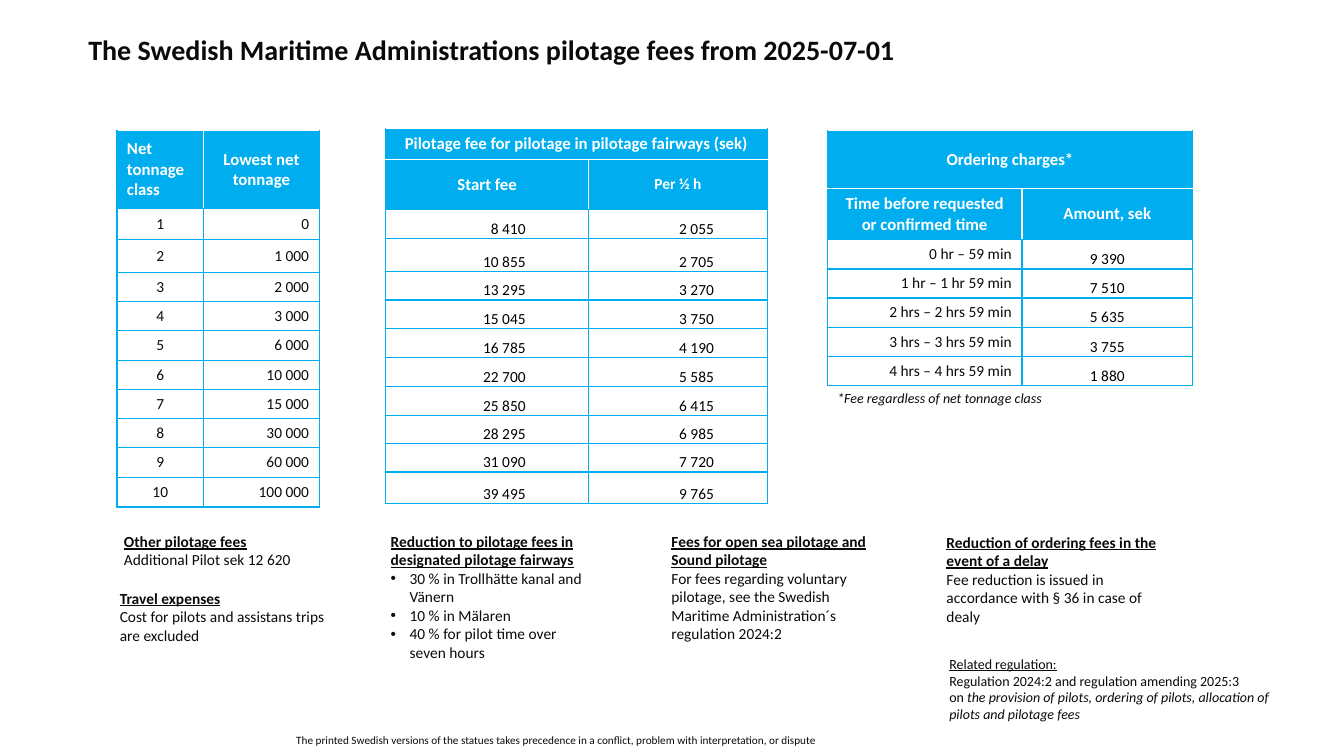
from lxml import etree
from pptx import Presentation
from pptx.dml.color import RGBColor
from pptx.enum import text as t
from pptx.oxml import ns
from pptx.util import Pt

SKY = RGBColor(0x00, 0xAE, 0xEF)
WHITE = RGBColor(0xFF, 0xFF, 0xFF)
INK = RGBColor(0x0C, 0x0A, 0x08)
BLACK = RGBColor(0x00, 0x00, 0x00)
LEFT, CENTER, RIGHT = t.PP_ALIGN.LEFT, t.PP_ALIGN.CENTER, t.PP_ALIGN.RIGHT

deck = Presentation()
deck.slide_width, deck.slide_height = Pt(960), Pt(540)
slide = deck.slides.add_slide(deck.slide_layouts[6])


def add_run(paragraph, words, size, color, bold=False, underline=False, italic=False):
    run = paragraph.add_run()
    run.text = words
    font = run.font
    font.name, font.size, font.color.rgb = "Calibri", Pt(size), color
    font.bold, font.underline, font.italic = bold, underline, italic


def style_cell(cell, words, size, color, align, fill, edges):
    props = cell._tc.get_or_add_tcPr()
    for side, edge in zip("LRTB", edges):
        line = etree.SubElement(props, ns.qn(f"a:ln{side}"), w="12700")
        solid = etree.SubElement(line, ns.qn("a:solidFill"))
        etree.SubElement(solid, ns.qn("a:srgbClr"), val=str(edge))
    if fill is None:
        cell.fill.background()
    else:
        cell.fill.solid()
        cell.fill.fore_color.rgb = fill
    cell.vertical_anchor = t.MSO_ANCHOR.MIDDLE
    paragraph = cell.text_frame.paragraphs[0]
    paragraph.alignment = align
    if words:
        add_run(paragraph, words, size, color, bold=fill is not None)


tonnages = ["0", "1 000", "2 000", "3 000", "6 000", "10 000", "15 000",
            "30 000", "60 000", "100 000"]
tonnage_rows = [(str(number), lowest) for number, lowest in enumerate(tonnages, 1)]
fee_rows = [("8 410", "2 055"), ("10 855", "2 705"), ("13 295", "3 270"),
            ("15 045", "3 750"), ("16 785", "4 190"), ("22 700", "5 585"),
            ("25 850", "6 415"), ("28 295", "6 985"), ("31 090", "7 720"),
            ("39 495", "9 765")]
ordering_rows = [("0 hr – 59 min", "9 390"), ("1 hr – 1 hr 59 min", "7 510"),
                 ("2 hrs – 2 hrs 59 min", "5 635"), ("3 hrs – 3 hrs 59 min", "3 755"),
                 ("4 hrs – 4 hrs 59 min", "1 880")]

# left, top, column widths, row heights, headers, body, alignments, right insets of low-set columns
tables = [
    (83.5, 93, (62, 82.5), [56.2, 21.6, 23.8] + [20.9] * 7 + [21.4],
     [("Net tonnage class", "Lowest net tonnage")], tonnage_rows,
     (CENTER, RIGHT), (None, None)),
    (275.5, 92, (145, 127.5),
     [22, 35.8, 20.5, 23.8, 20.2, 20.4, 20.9, 20.4, 20.7, 20.4, 20.2, 22.4],
     [("Pilotage fee for pilotage in pilotage fairways (sek)", ""),
      ("Start fee", "Per ½ h")], fee_rows, (RIGHT, RIGHT), (45, 38)),
    (591, 93, (139, 122), [41.8, 35.6] + [20.5] * 5,
     [("Ordering charges*", ""),
      ("Time before requested or confirmed time", "Amount, sek")],
     ordering_rows, (RIGHT, CENTER), (None, 0.72)),
]
for left, top, widths, heights, headers, body, aligns, low_insets in tables:
    grid = slide.shapes.add_table(len(heights), 2, Pt(left), Pt(top),
                                  Pt(sum(widths)), Pt(sum(heights))).table
    grid.horz_banding = grid.first_row = False
    for column, width in zip(grid.columns, widths):
        column.width = Pt(width)
    for row, height in zip(grid.rows, heights):
        row.height = Pt(height)
    for r, values in enumerate(headers + body):
        is_header = r < len(headers)
        is_title = is_header and not values[1]
        for c, words in enumerate(values):
            cell = grid.cell(r, c)
            if is_header:
                inner = SKY if is_title else WHITE
                edges = (inner if c else SKY, SKY if c else inner, WHITE,
                         WHITE if r + 1 < len(headers) else SKY)
                size = 11 if words == "Per ½ h" else 12
                align = LEFT if words == "Net tonnage class" else CENTER
                style_cell(cell, words, size, WHITE, align, SKY, edges)
                continue
            inset = low_insets[c]
            style_cell(cell, words, 11, INK if inset is None else BLACK,
                       aligns[c], None, [SKY] * 4)
            if inset is not None:
                cell.vertical_anchor = t.MSO_ANCHOR.BOTTOM
                cell.margin_left = cell.margin_top = Pt(0.72)
                cell.margin_right, cell.margin_bottom = Pt(inset), Pt(0)
        if is_title:
            grid.cell(r, 0).merge(grid.cell(r, 1))

HEADING = {"bold": True, "underline": True}
notes = [
    (56, 19.5, 738, 31.5, 20,
     [[("The Swedish Maritime Administrations pilotage fees from 2025-07-01",
        {"bold": True})]]),
    (81.5, 376.5, 174, 34, 11,
     [[("Other pilotage fees", HEADING)], [("Additional Pilot sek 12 620", {})]]),
    (78.5, 417, 168.5, 47.5, 11,
     [[("Travel expenses", HEADING)],
      [("Cost for pilots and assistans trips are excluded", {})]]),
    (272, 376.5, 154, 101, 11,
     [[("Reduction to pilotage fees in designated pilotage fairways", HEADING)],
      [("30 % in Trollhätte kanal and Vänern", {"bullet": True})],
      [("10 % in Mälaren", {"bullet": True})],
      [("40 % for pilot time over seven hours", {"bullet": True})]]),
    (472.5, 376.5, 171.5, 74, 11,
     [[("Fees for open sea pilotage and Sound pilotage", HEADING)],
      [("For fees regarding voluntary pilotage, see the Swedish Maritime "
        "Administration´s regulation 2024:2", {})]]),
    (669, 377, 174, 74, 11,
     [[("Reduction of ordering fees in the event of a delay", HEADING)],
      [("Fee reduction is issued in accordance with § 36 in case of dealy", {})]]),
    (591, 274.5, 174, 19.5, 10,
     [[("*Fee regardless of net tonnage class", {"italic": True})]]),
    (671, 464.5, 247.5, 55.5, 10,
     [[("Related regulation:", {"underline": True})],
      [("Regulation 2024:2 and regulation amending 2025:3", {})],
      [("on ", {}),
       ("the provision of pilots, ordering of pilots, allocation of pilots and "
        "pilotage fees", {"italic": True})]]),
    (204.5, 520.5, 390, 17, 8,
     [[("The printed Swedish versions of the statues takes precedence in a conflict, "
        "problem with interpretation, or dispute", {})]]),
]
for left, top, width, height, size, paragraphs in notes:
    frame = slide.shapes.add_textbox(Pt(left), Pt(top), Pt(width), Pt(height)).text_frame
    frame.word_wrap = True
    for index, runs in enumerate(paragraphs):
        paragraph = frame.add_paragraph() if index else frame.paragraphs[0]
        for words, look in runs:
            style = dict(look)
            if style.pop("bullet", False):
                props = paragraph._p.get_or_add_pPr()
                props.set("marL", str(Pt(13.5)))
                props.set("indent", str(Pt(-13.5)))
                etree.SubElement(props, ns.qn("a:buFont"), typeface="Arial")
                etree.SubElement(props, ns.qn("a:buChar"), char="•")
            add_run(paragraph, words, size, INK, **style)

deck.save("out.pptx")
